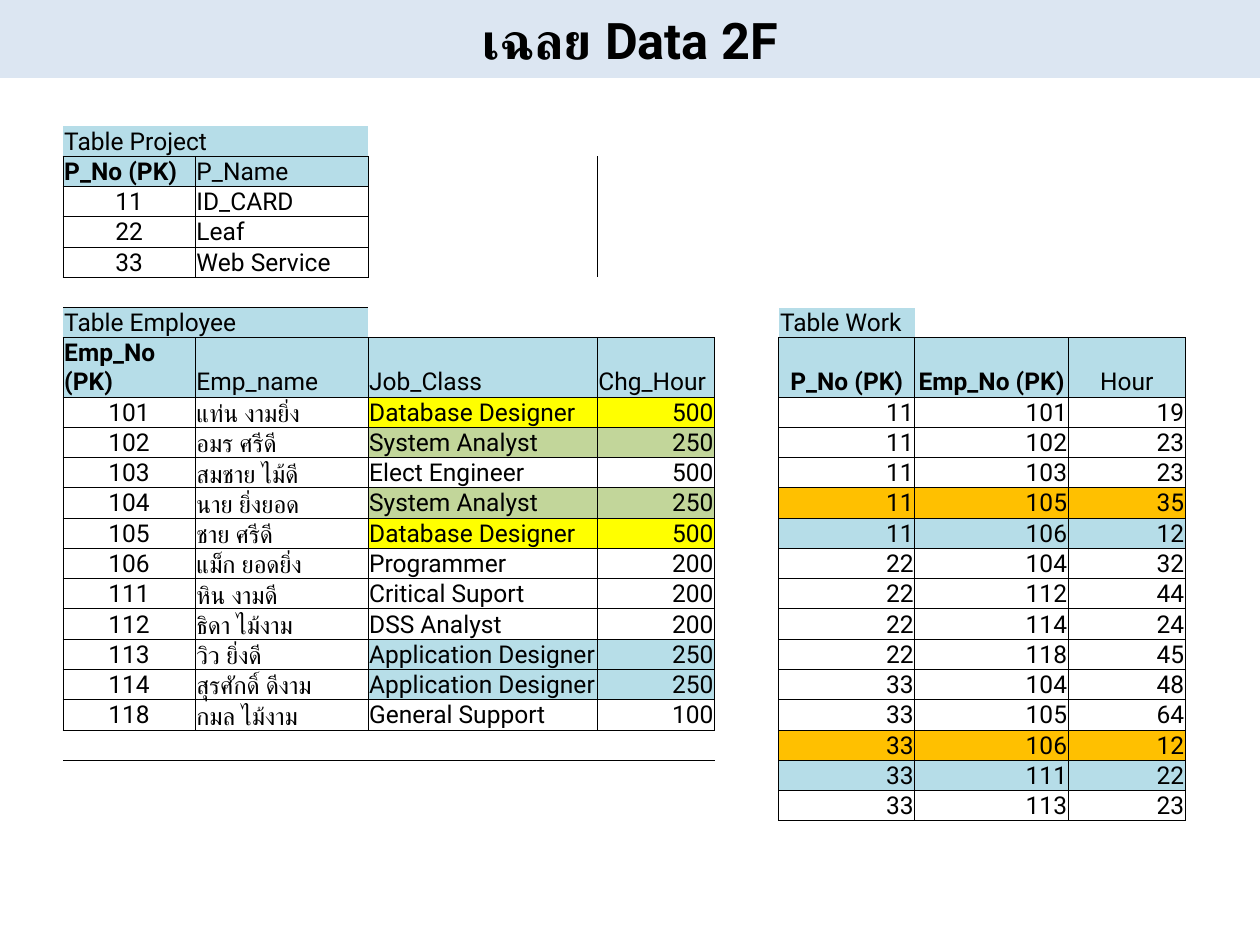
from dataclasses import dataclass
from lxml.etree import SubElement
from pptx import Presentation
from pptx.dml.color import RGBColor as RGB
from pptx.enum.shapes import MSO_SHAPE as SHAPE
from pptx.enum.text import MSO_ANCHOR as ANCHOR, PP_ALIGN as ALIGN
from pptx.oxml.ns import qn
from pptx.util import Pt


@dataclass(frozen=True)
class Theme:
    font: str = "Roboto"
    title_size: float = 28.8
    body_size: float = 14
    rule_width: float = 0.5
    ink: str = "000000"
    banner: str = "DCE6F2"
    header: str = "B6DDE8"
    aqua: str = "B7DEE8"
    yellow: str = "FFFF00"
    green: str = "C2D69A"
    orange: str = "FFC000"


THEME = Theme()
L, C, R = ALIGN.LEFT, ALIGN.CENTER, ALIGN.RIGHT
NO_STYLE = "{2D5ABB26-0587-4C30-8999-92F81FD0307C}"
SIDES = {"a:lnL": (0, -1), "a:lnR": (0, 1), "a:lnT": (-1, 0), "a:lnB": (1, 0)}

COLUMN_WIDTHS = [75.6, 98.7, 131, 67.2, 36.6, 77.8, 87.7, 67]
ROW_HEIGHT, ROW_COUNT, TALL_ROW = 16.9, 23, 7

PROJECTS = [("11", "ID_CARD"), ("22", "Leaf"), ("33", "Web Service")]
EMPLOYEES = [
    ("101", "แท่น งามยิ่ง", "Database Designer", "500"),
    ("102", "อมร ศรีดี", "System Analyst", "250"),
    ("103", "สมชาย ไม้ดี", "Elect Engineer", "500"),
    ("104", "นาย ยิ่งยอด", "System Analyst", "250"),
    ("105", "ชาย ศรีดี", "Database Designer", "500"),
    ("106", "แม็ก ยอดยิ่ง", "Programmer", "200"),
    ("111", "หิน งามดี", "Critical Suport", "200"),
    ("112", "ธิดา ไม้งาม", "DSS Analyst", "200"),
    ("113", "วิว ยิ่งดี", "Application Designer", "250"),
    ("114", "สุรศักดิ์ ดีงาม", "Application Designer", "250"),
    ("118", "กมล ไม้งาม", "General Support", "100"),
]
WORK = [
    ("11", "101", "19"), ("11", "102", "23"), ("11", "103", "23"),
    ("11", "105", "35"), ("11", "106", "12"), ("22", "104", "32"),
    ("22", "112", "44"), ("22", "114", "24"), ("22", "118", "45"),
    ("33", "104", "48"), ("33", "105", "64"), ("33", "106", "12"),
    ("33", "111", "22"), ("33", "113", "23"),
]
JOB_COLOURS = {
    "Database Designer": THEME.yellow,
    "System Analyst": THEME.green,
    "Application Designer": THEME.aqua,
}
WORK_COLOURS = {
    ("11", "105"): THEME.orange, ("11", "106"): THEME.header,
    ("33", "106"): THEME.orange, ("33", "111"): THEME.header,
}


def project_fill(project, column):
    return None


def employee_fill(employee, column):
    return JOB_COLOURS.get(employee[2]) if column >= 2 else None


def work_fill(entry, column):
    return WORK_COLOURS.get(entry[:2])


class SlideWriter:
    def __init__(self, slide, theme):
        self.slide, self.theme = slide, theme

    def style(self, paragraph, size, align, bold=False):
        paragraph.alignment = align
        font = paragraph.font
        font.name, font.size, font.bold = self.theme.font, Pt(size), bold
        font.color.rgb = RGB.from_string(self.theme.ink)

    def banner(self, text, width, height):
        banner = self.slide.shapes.add_shape(SHAPE.RECTANGLE, 0, 0, Pt(width), Pt(height))
        banner.shadow.inherit = False
        banner.fill.solid()
        banner.fill.fore_color.rgb = RGB.from_string(self.theme.banner)
        banner.line.fill.background()
        frame = banner.text_frame
        frame.vertical_anchor = ANCHOR.MIDDLE
        frame.text = text
        self.style(frame.paragraphs[0], self.theme.title_size, C, True)

    def grid(self, left, top, widths, heights):
        frame = self.slide.shapes.add_table(
            len(heights), len(widths), Pt(left), Pt(top), Pt(sum(widths)), Pt(sum(heights)))
        grid = frame.table
        grid.first_row = grid.horz_banding = False
        grid._tbl.tblPr.find(qn("a:tableStyleId")).text = NO_STYLE
        for column, width in zip(grid.columns, widths):
            column.width = Pt(width)
        for row, height in zip(grid.rows, heights):
            row.height = Pt(height)
        return grid

    def cell(self, cell, text="", align=L, fill=None):
        cell.vertical_anchor = ANCHOR.BOTTOM
        cell.margin_left = cell.margin_right = cell.margin_top = Pt(0.72)
        cell.margin_bottom = 0
        cell.text = text
        paragraph = cell.text_frame.paragraphs[0]
        self.style(paragraph, self.theme.body_size, align, text.endswith("(PK)"))
        if not text:
            SubElement(paragraph._p, qn("a:endParaRPr"), sz=str(int(self.theme.body_size * 100)))
        if fill:
            cell.fill.solid()
            cell.fill.fore_color.rgb = RGB.from_string(fill)
        else:
            cell.fill.background()

    def border(self, cell, sides):
        properties = cell._tc.get_or_add_tcPr()
        for side in sides:
            line = SubElement(properties, qn(side), w=str(Pt(self.theme.rule_width)))
            ink = SubElement(line, qn("a:solidFill"))
            SubElement(ink, qn("a:srgbClr"), val=self.theme.ink)

    def relation(self, contents, origin, title, headings, header_aligns, records, aligns, fill_of):
        top, left = origin
        header = self.theme.header
        contents[origin] = (title, L, header)
        framed = set()
        for row, record in enumerate([headings] + records):
            for column, text in enumerate(record):
                place = (top + 1 + row, left + column)
                framed.add(place)
                if row == 0:
                    contents[place] = (text, header_aligns[column], header)
                else:
                    contents[place] = (text, aligns[column], fill_of(record, column))
        return framed


def main():
    deck = Presentation()
    deck.slide_width, deck.slide_height = Pt(720), Pt(540)
    writer = SlideWriter(deck.slides.add_slide(deck.slide_layouts[6]), THEME)
    writer.banner("เฉลย Data 2F", 720, 44.6)

    contents = {}
    framed = writer.relation(
        contents, (0, 0), "Table Project", ("P_No (PK)", "P_Name"), (L, L),
        PROJECTS, (C, L), project_fill)
    framed |= writer.relation(
        contents, (6, 0), "Table Employee",
        ("Emp_No (PK)", "Emp_name", "Job_Class", "Chg_Hour"), (L, L, L, L),
        EMPLOYEES, (C, L, L, R), employee_fill)
    framed |= writer.relation(
        contents, (6, 5), "Table Work", ("P_No (PK)", "Emp_No (PK)", "Hour"), (C, C, C),
        WORK, (R, R, R), work_fill)

    heights = [ROW_HEIGHT * (2 if row == TALL_ROW else 1) for row in range(ROW_COUNT)]
    grid = writer.grid(36, 72, COLUMN_WIDTHS, heights)
    for row in range(ROW_COUNT):
        for column in range(len(COLUMN_WIDTHS)):
            cell = grid.cell(row, column)
            writer.border(cell, [
                side for side, (down, across) in SIDES.items()
                if framed & {(row, column), (row + down, column + across)}])
            writer.cell(cell, *contents.get((row, column), ()))
    for title_row in (0, 6):
        grid.cell(title_row, 0).merge(grid.cell(title_row, 1))
    deck.save("out.pptx")


if __name__ == "__main__":
    main()
